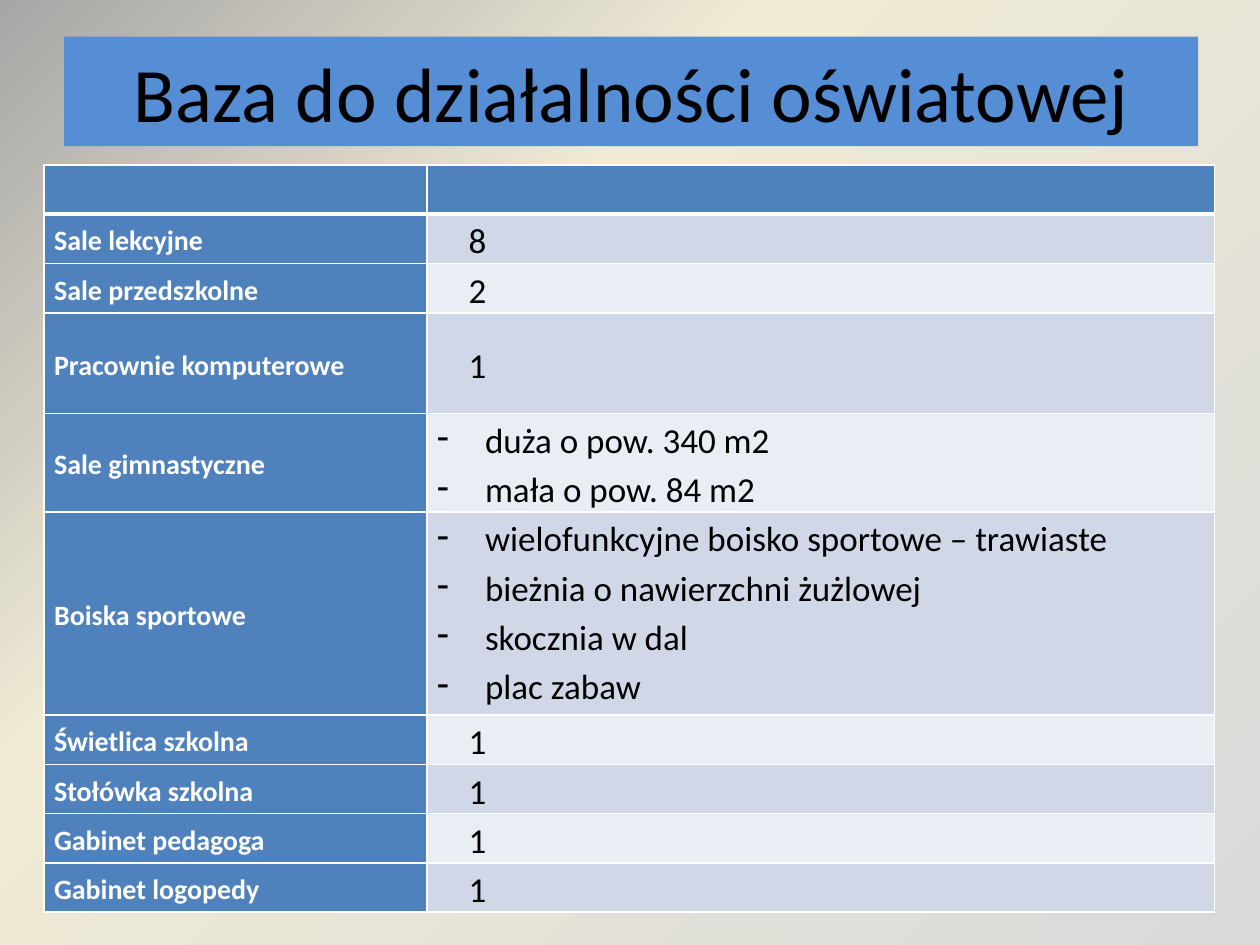
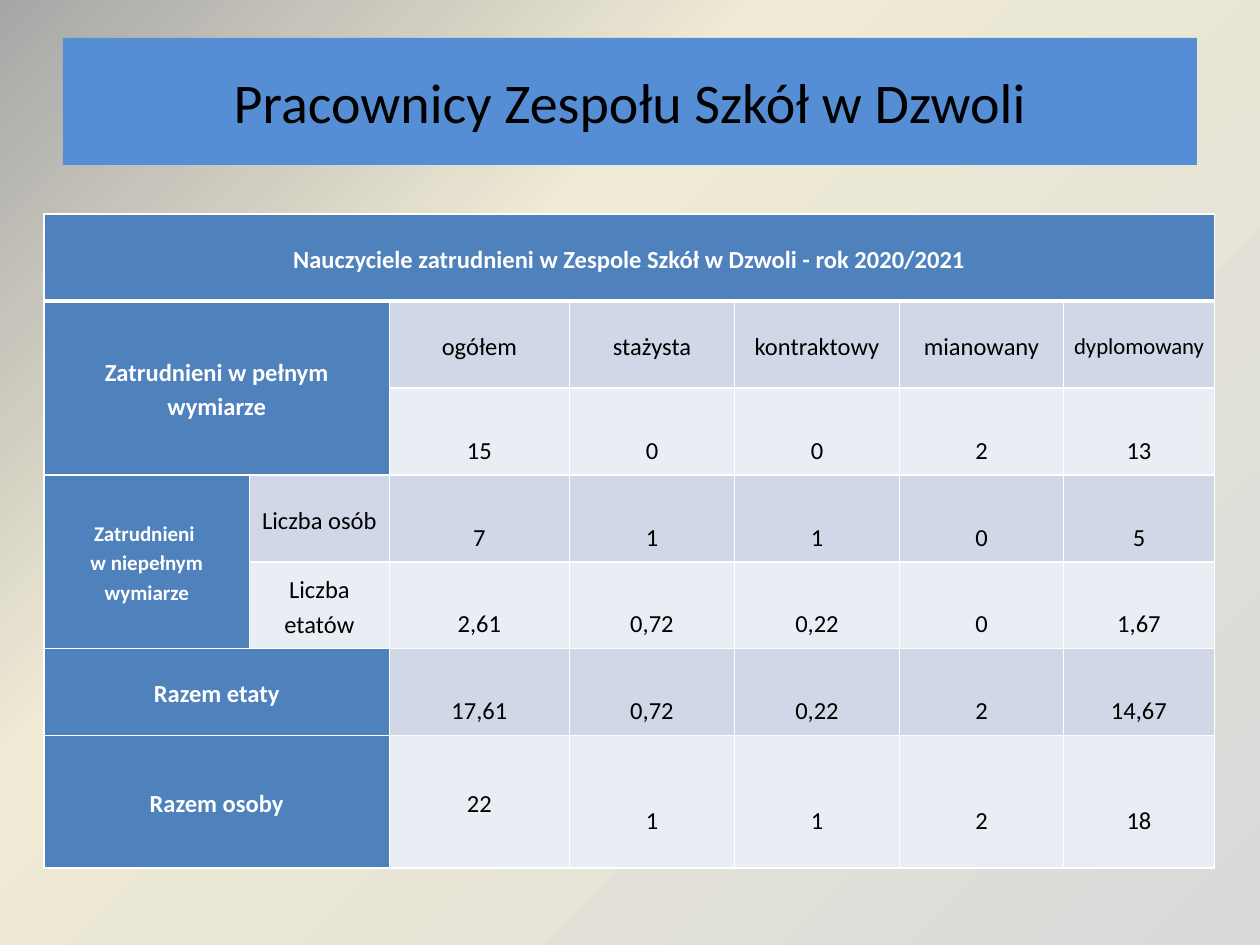
from dataclasses import dataclass
from pptx import Presentation
from pptx.dml.color import RGBColor as RGB
from pptx.enum.shapes import MSO_SHAPE as Shape
from pptx.enum.text import MSO_ANCHOR as Anchor, PP_ALIGN as Align
from pptx.oxml import parse_xml
from pptx.oxml.ns import nsdecls
from pptx.util import Inches, Pt


@dataclass(frozen=True)
class Theme:
    font: str = "Calibri"
    band: str = "558ED5"
    label: str = "4F81BD"
    odd: str = "D0D8E8"
    even: str = "E9EDF4"
    ink: str = "000000"
    white: str = "FFFFFF"
    glow: tuple = ((0, "D9D9D9"), (65, "F0EBD5"), (100, "A6A6A6"))
    big: int = 44
    head: int = 32
    item: int = 20
    name: int = 16
    body: int = 14
    tight: int = 13
    small: int = 12
    thin: int = 1
    thick: int = 3
    lead: float = 1.15


class Deck:
    """Build slides that share one theme."""

    def __init__(self, theme):
        self.theme = theme
        self.file = Presentation()
        self.file.slide_width = Inches(10)
        self.file.slide_height = Inches(7.5)

    def page(self):
        self.slide = self.file.slides.add_slide(self.file.slide_layouts[6])
        stops = "".join(
            f'<a:gs pos="{pos * 1000}"><a:srgbClr val="{color}"/></a:gs>'
            for pos, color in self.theme.glow)
        back = parse_xml(
            f'<p:bg {nsdecls("p", "a")}><p:bgPr><a:gradFill rotWithShape="1">'
            f'<a:gsLst>{stops}</a:gsLst><a:path path="circle">'
            '<a:fillToRect l="100000" t="100000"/></a:path></a:gradFill>'
            '<a:effectLst/></p:bgPr></p:bg>')
        self.slide.element.cSld.insert(0, back)

    def style(self, frame, size, color, bold=False, align=Align.LEFT):
        for para in frame.paragraphs:
            para.alignment = align
            for run in para.runs:
                font = run.font
                font.name, font.size, font.bold = self.theme.font, Pt(size), bold
                font.color.rgb = RGB.from_string(color)

    def title(self, text, left, top, height, size):
        box = self.slide.shapes.add_shape(
            Shape.RECTANGLE, Inches(left), Inches(top), Inches(9), Inches(height))
        box.shadow.inherit = False
        box.fill.solid()
        box.fill.fore_color.rgb = RGB.from_string(self.theme.band)
        box.line.fill.background()
        frame = box.text_frame
        frame.word_wrap = True
        frame.vertical_anchor = Anchor.MIDDLE
        frame.text = text
        self.style(frame, size, self.theme.ink, align=Align.CENTER)

    def table(self, top, cols, rows, merges=()):
        grid = self.slide.shapes.add_table(
            len(rows), len(cols), Inches(0.35), Inches(top),
            Inches(sum(cols)), Inches(sum(rows))).table
        grid.first_row = grid.horz_banding = False
        for col, width in zip(grid.columns, cols):
            col.width = Inches(width)
        for row, height in zip(grid.rows, rows):
            row.height = Inches(height)
        for first, last in merges:
            grid.cell(*first).merge(grid.cell(*last))
        for r in range(len(rows)):
            for c in range(len(cols)):
                cell = grid.cell(r, c)
                if not cell.is_spanned:
                    self.paint(cell, r, c)
        return grid

    def paint(self, cell, r, c):
        theme = self.theme
        sides = dict.fromkeys("LRTB", theme.thin)
        if r < 2:
            sides["B" if r == 0 else "T"] = theme.thick
        props = cell._tc.get_or_add_tcPr()
        for side, width in sides.items():
            props.append(parse_xml(
                f'<a:ln{side} {nsdecls("a")} w="{Pt(width)}"><a:solidFill>'
                f'<a:srgbClr val="{theme.white}"/></a:solidFill></a:ln{side}>'))
        fill = theme.label if r == 0 or c == 0 else theme.odd if r % 2 else theme.even
        cell.fill.solid()
        cell.fill.fore_color.rgb = RGB.from_string(fill)
        cell.margin_left = cell.margin_right = Inches(0.08)
        cell.margin_top = cell.margin_bottom = 0
        cell.vertical_anchor = Anchor.MIDDLE

    def label(self, cell, text, size, lead=False, align=Align.LEFT):
        frame = cell.text_frame
        frame.text = text
        for para in frame.paragraphs:
            para.line_spacing = self.theme.lead
        color = self.theme.white if lead else self.theme.ink
        self.style(frame, size, color, lead, align)

    def indent(self, cell, left, mark=None):
        for para in cell.text_frame.paragraphs:
            props = para._p.get_or_add_pPr()
            props.set("marL", str(Inches(left)))
            if mark:
                props.set("indent", str(-Inches(left)))
                props.append(parse_xml(f'<a:buChar {nsdecls("a")} char="{mark}"/>'))


def rooms(deck):
    theme = deck.theme
    deck.page()
    deck.title("Baza do działalności oświatowej", 0.51, 0.29, 0.87, theme.big)
    data = [
        ("Sale lekcyjne", ["8"]),
        ("Sale przedszkolne", ["2"]),
        ("Pracownie komputerowe", ["1"]),
        ("Sale gimnastyczne", ["duża o pow. 340 m2", "mała o pow. 84 m2"]),
        ("Boiska sportowe", ["wielofunkcyjne boisko sportowe – trawiaste",
                             "bieżnia o nawierzchni żużlowej",
                             "skocznia w dal", "plac zabaw"]),
        ("Świetlica szkolna", ["1"]),
        ("Stołówka szkolna", ["1"]),
        ("Gabinet pedagoga", ["1"]),
        ("Gabinet logopedy", ["1"]),
    ]
    line = 0.39
    rows = [line] * 3 + [0.8, 2 * line, 1.61] + [line] * 4
    grid = deck.table(1.31, [3.04, 6.25], rows)
    for r, (name, items) in enumerate(data, 1):
        deck.label(grid.cell(r, 0), name, theme.name, True)
        cell = grid.cell(r, 1)
        deck.label(cell, "\n".join(items), theme.item)
        if len(items) > 1:
            cell.vertical_anchor = Anchor.TOP
            deck.indent(cell, 0.38, "-")
        else:
            deck.indent(cell, 0.25)


def staff(deck):
    theme = deck.theme
    deck.page()
    deck.title("Pracownicy Zespołu Szkół w Dzwoli", 0.5, 0.3, 1.01, theme.head)
    part = "Zatrudnieni \vw niepełnym wymiarze"
    rank = "dyplomowany"
    data = [
        ["Nauczyciele zatrudnieni w Zespole Szkół w Dzwoli - rok 2020/2021"],
        ["Zatrudnieni w pełnym wymiarze", "", "ogółem", "stażysta",
         "kontraktowy", "mianowany", rank],
        ["", "", "15", "0", "0", "2", "13"],
        [part, "Liczba osób", "7", "1", "1", "0", "5"],
        ["", "Liczba etatów", "2,61", "0,72", "0,22", "0", "1,67"],
        ["Razem etaty", "", "17,61", "0,72", "0,22", "2", "14,67"],
        ["Razem osoby", "", "22", "1", "1", "2", "18"],
    ]
    merges = [((0, 0), (0, 6)), ((1, 0), (2, 1)), ((3, 0), (4, 0)),
              ((5, 0), (5, 1)), ((6, 0), (6, 1))]
    cols = [1.63, 1.11, 1.43, 1.31, 1.31, 1.3, 1.2]
    grid = deck.table(1.7, cols, [0.69] * 6 + [1.05], merges)
    sizes = {part: theme.small, rank: theme.tight}
    for r, row in enumerate(data):
        for c, text in enumerate(row):
            if not text:
                continue
            cell = grid.cell(r, c)
            size = sizes.get(text, theme.body)
            deck.label(cell, text, size, r == 0 or c == 0, Align.CENTER)
            if r > 1 and c > 1 and (r, c) != (6, 2):
                cell.margin_top = Inches(0.27)


def main():
    deck = Deck(Theme())
    rooms(deck)
    staff(deck)
    deck.file.save("out.pptx")


if __name__ == "__main__":
    main()
